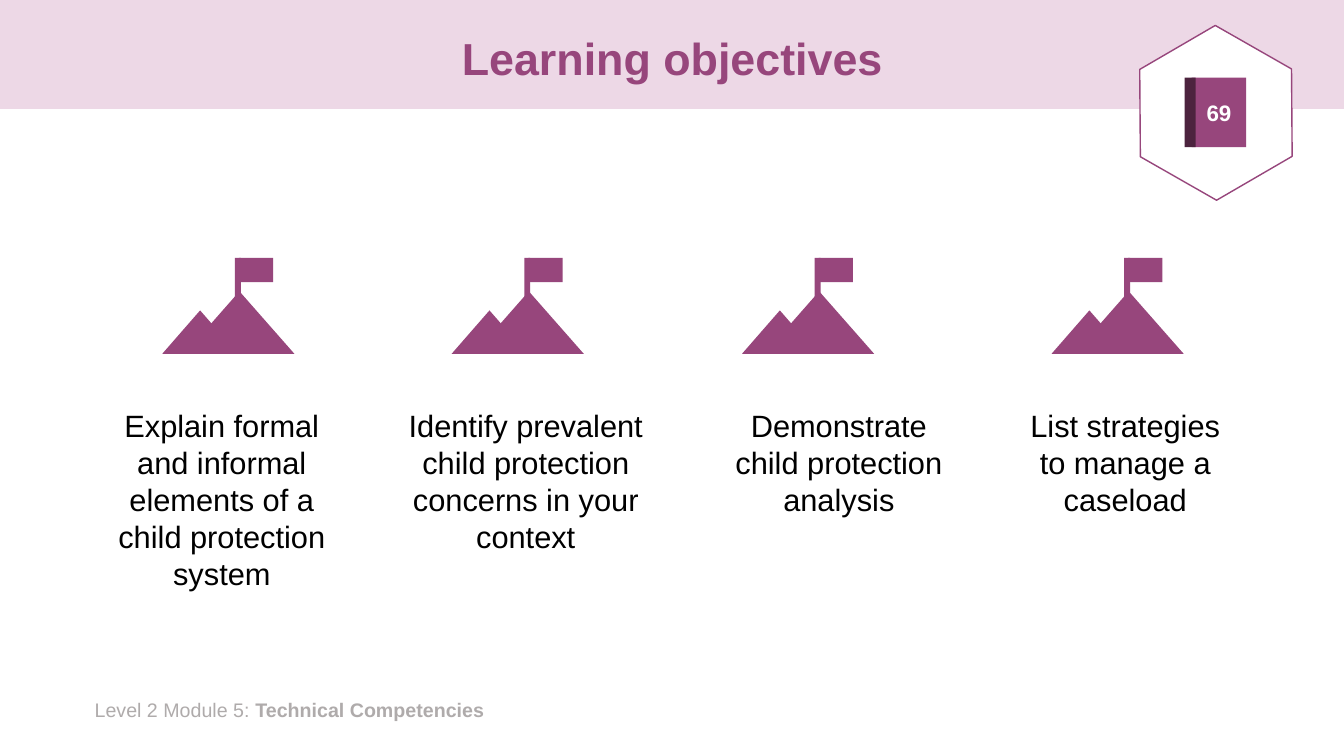
from pptx import Presentation
from pptx.dml.color import RGBColor
from pptx.enum.shapes import MSO_SHAPE as SHAPE
from pptx.enum.text import MSO_ANCHOR as ANCHOR, PP_ALIGN as ALIGN
from pptx.util import Inches, Pt

PLUM, DARK_PLUM, PINK = "97467C", "4C233E", "EDD8E6"
WHITE, BLACK, GREY = "FFFFFF", "000000", "AFABAB"

# Icon left, text left, text width, text height, wording
OBJECTIVES = [
    (1.61, 0.95, 2.5, 1.95,
     "Explain formal and informal elements of a child protection system"),
    (4.48, 3.85, 2.73, 1.58,
     "Identify prevalent child protection concerns in your context"),
    (7.36, 7.1, 2.44, 1.21, "Demonstrate child protection analysis"),
    (10.43, 10.02, 2.28, 1.21, "List strategies to manage a caseload"),
]

# Flagpole, flag, tall peak, low peak: offsets from the icon's corner
MOUNTAIN = [
    (SHAPE.RECTANGLE, 0.72, 0, 0.06, 0.4),
    (SHAPE.RECTANGLE, 0.76, 0, 0.34, 0.24),
    (SHAPE.ISOSCELES_TRIANGLE, 0.22, 0.33, 1.09, 0.62),
    (SHAPE.ISOSCELES_TRIANGLE, 0, 0.52, 0.75, 0.43),
]
ICON_TOP, TEXT_TOP = 2.56, 3.99


def rgb(color):
    return RGBColor.from_string(color)


def set_font(font, size, color, bold=False):
    font.name, font.size, font.bold = "Arial", Pt(size), bold
    font.color.rgb = rgb(color)


def add_shape(shapes, kind, x, y, w, h, fill, line=None):
    sp = shapes.add_shape(kind, Inches(x), Inches(y), Inches(w), Inches(h))
    sp.shadow.inherit = False
    sp.fill.solid()
    sp.fill.fore_color.rgb = rgb(fill)
    if line:
        sp.line.color.rgb = rgb(line)
        sp.line.width = Pt(1)
    else:
        sp.line.fill.background()
    return sp


def add_text(s, x, y, w, h, runs, size, color, align):
    box = s.shapes.add_textbox(Inches(x), Inches(y), Inches(w), Inches(h))
    box.text_frame.word_wrap = True
    p = box.text_frame.paragraphs[0]
    p.alignment = align
    set_font(p.font, size, color)
    for text, bold in runs:
        r = p.add_run()
        r.text = text
        r.font.bold = bold


def add_title(s, text):
    title = s.shapes.title
    title.left, title.top = Inches(0.92), Inches(0.13)
    title.width, title.height = Inches(11.5), Inches(0.95)
    tf = title.text_frame
    tf.text = text
    tf.vertical_anchor = ANCHOR.MIDDLE
    p = tf.paragraphs[0]
    p.alignment, p.line_spacing = ALIGN.CENTER, 0.9
    set_font(p.font, 32, PLUM, True)


def add_mountain(s, left):
    group = s.shapes.add_group_shape()
    for kind, dx, dy, w, h in MOUNTAIN:
        add_shape(group.shapes, kind, left + dx, ICON_TOP + dy, w, h, PLUM)


def add_page_badge(s, number):
    shapes = s.shapes.add_group_shape().shapes
    hexagon = add_shape(shapes, SHAPE.HEXAGON, 11.19, 0.37, 1.74, 1.5, WHITE, PLUM)
    hexagon.adjustments[0] = 0.29
    hexagon.rotation = 29.7
    book = add_shape(shapes, SHAPE.RECTANGLE, 11.82, 0.77, 0.54, 0.69, PLUM)
    tf = book.text_frame
    tf.text = number
    tf.word_wrap = False
    tf.vertical_anchor = ANCHOR.MIDDLE
    p = tf.paragraphs[0]
    p.alignment = ALIGN.CENTER
    set_font(p.font, 16, WHITE, True)
    add_shape(shapes, SHAPE.RECTANGLE, 11.75, 0.77, 0.11, 0.69, DARK_PLUM)


def main():
    prs = Presentation()
    prs.slide_width, prs.slide_height = Inches(13.33), Inches(7.5)
    s = prs.slides.add_slide(prs.slide_layouts[5])

    # Header band, placed behind the title
    band = add_shape(s.shapes, SHAPE.RECTANGLE, 0, 0, 13.33, 1.08, PINK)
    s.shapes.title.element.addprevious(band.element)
    add_title(s, "Learning objectives")

    # Footer
    add_text(s, 0.84, 6.87, 4.55, 0.34,
             [("Level 2 Module 5: ", False), ("Technical Competencies", True)],
             14, GREY, ALIGN.LEFT)

    # Objectives
    for icon_left, x, w, h, text in OBJECTIVES:
        add_mountain(s, icon_left)
        add_text(s, x, TEXT_TOP, w, h, [(text, False)], 22, BLACK, ALIGN.CENTER)

    # Page reference
    add_page_badge(s, "69")
    prs.save("out.pptx")


if __name__ == "__main__":
    main()
